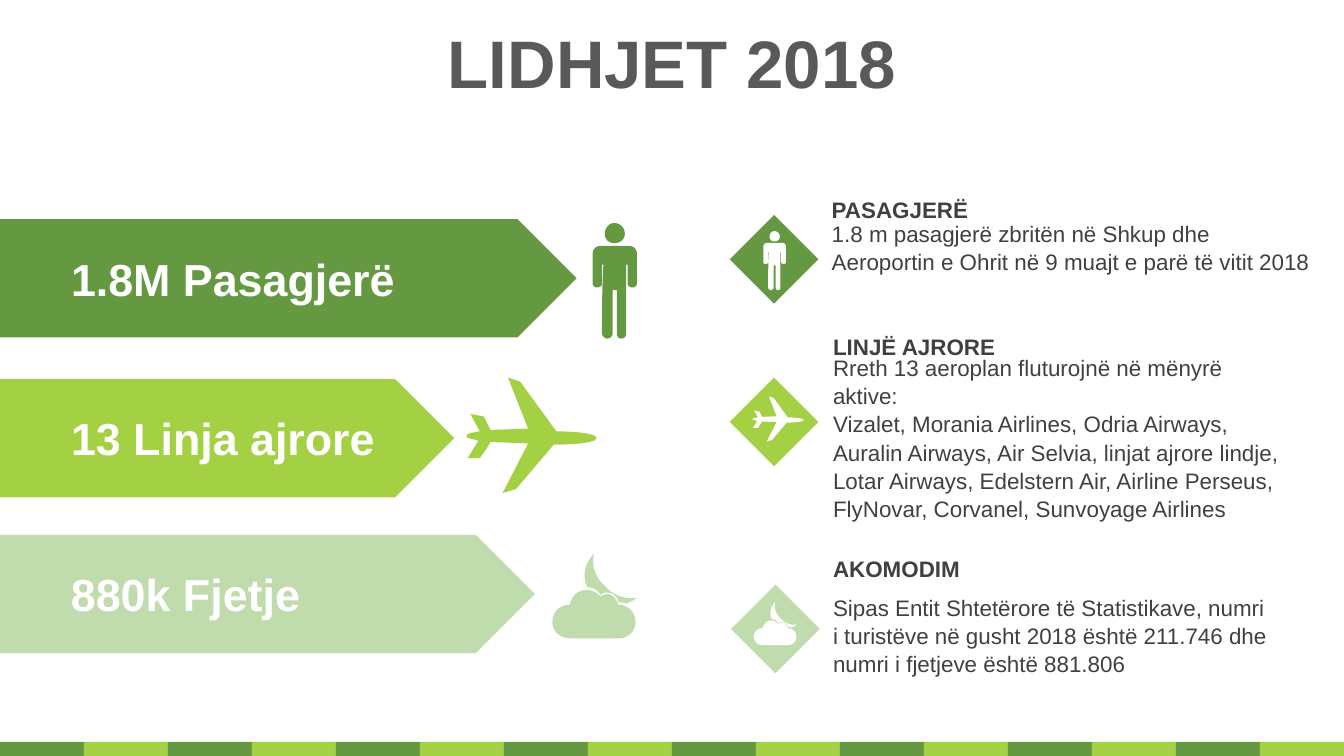
from dataclasses import dataclass
from pptx import Presentation
from pptx.dml.color import RGBColor
from pptx.enum.shapes import MSO_SHAPE as Kind
from pptx.enum.text import MSO_ANCHOR as Anchor, MSO_AUTO_SIZE as Auto, PP_ALIGN as Align
from pptx.util import Inches, Pt

# Square grid: 100 columns by 56.25 rows
COLS, ROWS = 100, 56.25
CELL = Inches(10) / COLS
GREEN, LIME, PALE = "649941", "A4D144", "C0DCAD"
WHITE, GREY, DARK = "FFFFFF", "595959", "404040"

# Icon outlines in tenths of a cell, from the icon's top left corner
MAN = """M 6 17 L 27 17 C 30 17 33 19 33 23 L 33 45 C 33 47 31 48 30 48
C 28 48 26 47 26 45 L 26 31 L 25 31 L 25 82 C 25 84 24 86 21 86
C 19 86 18 84 18 82 L 18 50 L 15 50 L 15 82 C 15 84 13 86 11 86
C 9 86 7 84 7 82 C 7 65 7 48 8 31 L 7 31 L 7 45 C 7 47 5 48 3 48
C 2 48 0 47 0 45 L 0 23 C 0 19 3 17 6 17
M 16 0 C 21 0 24 4 24 8 C 24 12 21 15 16 15 C 12 15 9 12 9 8 C 9 4 12 0 16 0"""
PLANE = """M 1 60 L 9 47 C 6 46 0 45 0 44 C 0 41 6 41 10 40 L 3 27 L 13 29
L 18 39 L 46 38 L 31 0 L 40 3 L 67 40 C 77 40 97 41 97 45
C 97 49 76 50 65 50 L 37 83 L 27 86 L 46 49 L 18 48 C 16 52 10 60 10 60"""
NIGHT = """M 25 27 C 30 27 33 29 36 32 C 37 31 39 30 41 30 C 45 30 48 34 49 38
C 56 38 62 43 62 51 C 62 57 57 63 50 63 L 13 63 C 6 63 0 58 0 51
C 0 43 6 38 13 38 C 14 32 19 27 25 27
M 31 0 C 29 9 32 18 39 24 C 45 31 54 34 63 33 C 60 35 58 36 55 37
C 54 37 52 36 50 36 L 49 36 C 49 32 45 29 41 29 C 39 29 37 29 36 31
C 34 27 30 25 26 25 C 22 17 24 7 31 0"""


@dataclass
class Box:
    x: float
    y: float
    w: float
    h: float

    def emu(self) -> list[int]:
        return [round(v * CELL) for v in (self.x, self.y, self.w, self.h)]


@dataclass
class Icon:
    x: float
    y: float
    size: float = 1


@dataclass
class Topic:
    hue: str
    bar: Box
    label: str
    name: Box
    form: str
    big: Icon
    small: Icon
    gem: Box
    head: str
    top: Box
    lines: list[str]
    body: Box
    anchor: Anchor = Anchor.MIDDLE


TOPICS = [
    Topic(GREEN, Box(0, 16.3, 42.9, 8.8), "1.8M Pasagjerë", Box(4.3, 18.2, 31.5, 5),
          MAN, Icon(44.1, 16.6), Icon(56.8, 17.2, 0.51), Box(54.3, 16, 6.6, 6.6),
          "PASAGJERË", Box(60.9, 14.1, 36.2, 3),
          ["1.8 m pasagjerë zbritën në Shkup dhe",
           "Aeroportin e Ohrit në 9 muajt e parë të vitit 2018"],
          Box(60.9, 15.8, 37.9, 7.1), Anchor.TOP),
    Topic(LIME, Box(0, 28.2, 33.8, 8.8), "13 Linja ajrore", Box(4.3, 30.1, 26.8, 5),
          PLANE, Icon(34.7, 28.1), Icon(56, 29.5, 0.39), Box(54.3, 28.1, 6.6, 6.6),
          "LINJË AJRORE", Box(61, 24.3, 36.2, 3),
          ["Rreth 13 aeroplan fluturojnë në mënyrë aktive:",
           "Vizalet, Morania Airlines, Odria Airways, Auralin Airways, Air Selvia, "
           "linjat ajrore lindje, Lotar Airways, Edelstern Air, Airline Perseus, "
           "FlyNovar, Corvanel, Sunvoyage Airlines"],
          Box(61, 27, 36.2, 11.1)),
    Topic(PALE, Box(0, 39.8, 39.8, 8.8), "880k Fjetje", Box(4.3, 41.7, 28.3, 5),
          NIGHT, Icon(41.1, 41.2), Icon(56.1, 44.8, 0.51), Box(54.4, 43.5, 6.6, 6.6),
          "AKOMODIM", Box(61, 40.8, 30.8, 3),
          ["Sipas Entit Shtetërore të Statistikave, numri i turistëve në gusht 2018 "
           "është 211.746 dhe numri i fjetjeve është 881.806"],
          Box(61, 43.7, 34.6, 7.1)),
]


def tint(code: str) -> RGBColor:
    return RGBColor.from_string(code)


def paint(shape, hue: str) -> None:
    shape.shadow.inherit = False
    shape.fill.solid()
    shape.fill.fore_color.rgb = tint(hue)
    shape.line.fill.background()


def block(slide, kind: Kind, box: Box, hue: str) -> None:
    paint(slide.shapes.add_shape(kind, *box.emu()), hue)


def style(para, size: float, hue: str, bold: bool) -> None:
    look = {"name": "Arial", "size": Pt(size), "bold": bold}
    for key, value in look.items():
        setattr(para.font, key, value)
    para.font.color.rgb = tint(hue)


def write(slide, box: Box, lines: list[str], size: float, hue: str, bold: bool = False,
          anchor: Anchor = Anchor.MIDDLE, lead: float = 1) -> None:
    frame = slide.shapes.add_textbox(*box.emu()).text_frame
    look = {"word_wrap": True, "vertical_anchor": anchor,
            "auto_size": Auto.SHAPE_TO_FIT_TEXT, "text": "\n".join(lines)}
    for key, value in look.items():
        setattr(frame, key, value)
    for para in frame.paragraphs:
        para.line_spacing = lead
        style(para, size, hue, bold)


def trace(form: str) -> list[list[tuple]]:
    """Turn an outline into closed runs of points, with curves cut in steps."""
    steps, runs, parts = 6, [], iter(form.split())
    for mark in parts:
        pts = [(float(next(parts)), float(next(parts))) for _ in range(3 if mark == "C" else 1)]
        if mark == "M":
            runs.append(pts)
        elif mark == "L":
            runs[-1] += pts
        else:
            ends = [runs[-1][-1], *pts]
            for t in (n / steps for n in range(1, steps + 1)):
                mix = ((1 - t) ** 3, 3 * t * (1 - t) ** 2, 3 * t * t * (1 - t), t ** 3)
                runs[-1].append(tuple(sum(m * p[i] for m, p in zip(mix, ends)) for i in (0, 1)))
    return runs


def draw(slide, form: str, icon: Icon, hue: str) -> None:
    fine = 100
    runs = [[(x * fine, y * fine) for x, y in run] for run in trace(form)]
    pen = slide.shapes.build_freeform(*runs[0][0], scale=CELL * icon.size / 10 / fine)
    for i, run in enumerate(runs):
        if i:
            pen.move_to(*run[0])
        pen.add_line_segments(run[1:], close=True)
    paint(pen.convert_to_shape(round(icon.x * CELL), round(icon.y * CELL)), hue)


def main() -> None:
    deck = Presentation()
    deck.slide_width, deck.slide_height = round(COLS * CELL), round(ROWS * CELL)
    slide = deck.slides.add_slide(deck.slide_layouts[5])

    # Striped foot
    count = 16
    step = COLS / count
    for n in range(count):
        block(slide, Kind.RECTANGLE, Box(n * step, ROWS - 1.05, step, 1.05), (GREEN, LIME)[n % 2])

    # Title
    title = slide.shapes.title
    for key, value in zip(("left", "top", "width", "height"), Box(0, 1.4, COLS, 6.3).emu()):
        setattr(title, key, value)
    frame = title.text_frame
    frame.text = "LIDHJET 2018"
    frame.auto_size, frame.vertical_anchor = Auto.NONE, Anchor.MIDDLE
    frame.paragraphs[0].alignment = Align.CENTER
    style(frame.paragraphs[0], 36, GREY, True)

    # Arrow bars on the left, details on the right
    for t in TOPICS:
        block(slide, Kind.PENTAGON, t.bar, t.hue)
        write(slide, t.name, [t.label], 24, WHITE, True)
        draw(slide, t.form, t.big, t.hue)
        block(slide, Kind.DIAMOND, t.gem, t.hue)
        draw(slide, t.form, t.small, WHITE)
        write(slide, t.body, t.lines, 12, DARK, anchor=t.anchor, lead=1.05)
        write(slide, t.top, [t.head], 12, DARK, True)

    deck.save("out.pptx")


if __name__ == "__main__":
    main()
